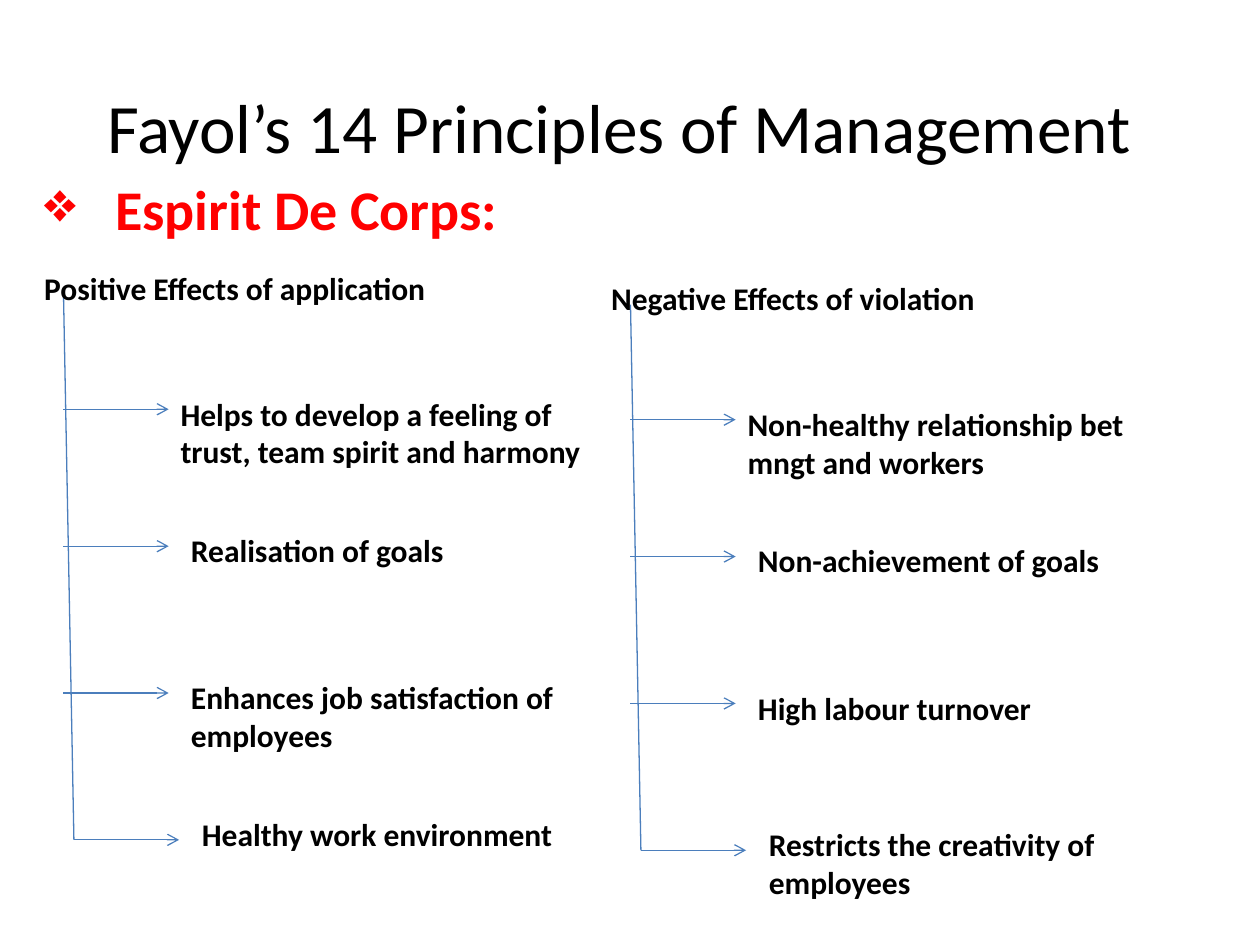
import dataclasses
import typing

import lxml.etree
import pptx
import pptx.dml.color
import pptx.enum.shapes
import pptx.enum.text
import pptx.oxml.ns
import pptx.util

Cm = pptx.util.Cm
Pt = pptx.util.Pt
RGBColor = pptx.dml.color.RGBColor
qn = pptx.oxml.ns.qn

BLACK = RGBColor(0x00, 0x00, 0x00)
RED = RGBColor(0xFF, 0x00, 0x00)
BLUE = RGBColor(0x4B, 0x7E, 0xBC)
FONT = "Calibri"

TRUNK_X, TRUNK_TOP, TRUNK_END_X = 0.64, 0.64, 0.85
ARROW_YS = (2.96, 5.72, 8.68, 11.64)
ARROW_LENGTH = 2.12
LABEL_XS = (2.75, 2.96, 2.96, 3.18)
LABEL_YS = (2.54, 5.29, 8.26, 11.01)
LABEL_WIDTH = 8.89
LINE_HEIGHTS = {1: 1.02, 2: 1.8}


@dataclasses.dataclass
class Effect:
    text: str
    lines: int = 1


@dataclasses.dataclass
class Branch:
    left: float
    top: float
    heading: str
    effects: typing.List[Effect]


BRANCHES = [
    Branch(12.07, 5.5, "Negative Effects of violation", [
        Effect("Non-healthy relationship bet mngt and workers", 2),
        Effect("Non-achievement of goals"),
        Effect("High labour turnover"),
        Effect("Restricts the creativity of employees", 2),
    ]),
    Branch(0.64, 5.29, "Positive Effects of application", [
        Effect("Helps to develop a feeling of trust, team spirit and harmony", 2),
        Effect("Realisation of goals"),
        Effect("Enhances job satisfaction of employees", 2),
        Effect("Healthy work environment"),
    ]),
]


def format_text(p, size: float, color: RGBColor, bold: bool) -> None:
    p.font.name = FONT
    p.font.size = Pt(size)
    p.font.bold = bold
    p.font.color.rgb = color


def add_line(shapes, x1: float, y1: float, x2: float, y2: float,
             arrow: bool = False) -> None:
    sp = shapes.add_connector(pptx.enum.shapes.MSO_CONNECTOR.STRAIGHT,
                              Cm(x1), Cm(y1), Cm(x2), Cm(y2))
    sp.line.color.rgb = BLUE
    sp.line.width = Pt(0.75)
    if arrow:
        lxml.etree.SubElement(sp.line._get_or_add_ln(), qn("a:tailEnd"), type="arrow")
    lxml.etree.SubElement(sp._element.spPr, qn("a:effectLst"))


def add_label(shapes, x: float, y: float, effect: Effect) -> None:
    sp = shapes.add_textbox(Cm(x), Cm(y), Cm(LABEL_WIDTH),
                            Cm(LINE_HEIGHTS[effect.lines]))
    tf = sp.text_frame
    tf.word_wrap = True
    tf.auto_size = pptx.enum.text.MSO_AUTO_SIZE.SHAPE_TO_FIT_TEXT
    tf.text = effect.text
    format_text(tf.paragraphs[0], 18, BLACK, True)


def add_branch(s, branch: Branch) -> None:
    shapes = s.shapes.add_group_shape().shapes
    x, y = branch.left, branch.top
    add_line(shapes, x + TRUNK_X, y + TRUNK_TOP, x + TRUNK_END_X, y + ARROW_YS[-1])
    for dy in ARROW_YS:
        start = x + (TRUNK_END_X if dy == ARROW_YS[-1] else TRUNK_X)
        add_line(shapes, start, y + dy, start + ARROW_LENGTH, y + dy, arrow=True)
    add_label(shapes, x, y, Effect(branch.heading))
    for dx, dy, effect in zip(LABEL_XS, LABEL_YS, branch.effects):
        add_label(shapes, x + dx, y + dy, effect)


def add_title(s, text: str) -> None:
    sp = s.shapes.title
    sp.left, sp.top, sp.width, sp.height = Cm(1.69), Cm(1.48), Cm(21.59), Cm(2.12)
    tf = sp.text_frame
    tf.text = text
    tf.vertical_anchor = pptx.enum.text.MSO_ANCHOR.MIDDLE
    p = tf.paragraphs[0]
    p.alignment = pptx.enum.text.PP_ALIGN.CENTER
    format_text(p, 39.6, BLACK, False)


def add_subtitle(s, text: str) -> None:
    sp = s.shapes.add_textbox(Cm(0.64), Cm(3.39), Cm(23.92), Cm(14.82))
    tf = sp.text_frame
    tf.word_wrap = True
    tf.text = text
    p = tf.paragraphs[0]
    p.space_before = Pt(6.4)
    format_text(p, 32, RED, True)
    pPr = p._p.get_or_add_pPr()
    pPr.set("marL", str(Cm(1.43)))
    pPr.set("indent", str(-Cm(1.43)))
    bullet = pPr.makeelement(qn("a:buChar"), {"char": "❖"})
    pPr.find(qn("a:defRPr")).addprevious(bullet)


def main() -> None:
    prs = pptx.Presentation()
    prs.slide_width, prs.slide_height = Cm(25.4), Cm(19.05)
    s = prs.slides.add_slide(prs.slide_layouts[5])
    add_title(s, "Fayol’s 14 Principles of Management")
    add_subtitle(s, "Espirit De Corps:")
    for branch in BRANCHES:
        add_branch(s, branch)
    prs.save("out.pptx")


if __name__ == "__main__":
    main()
